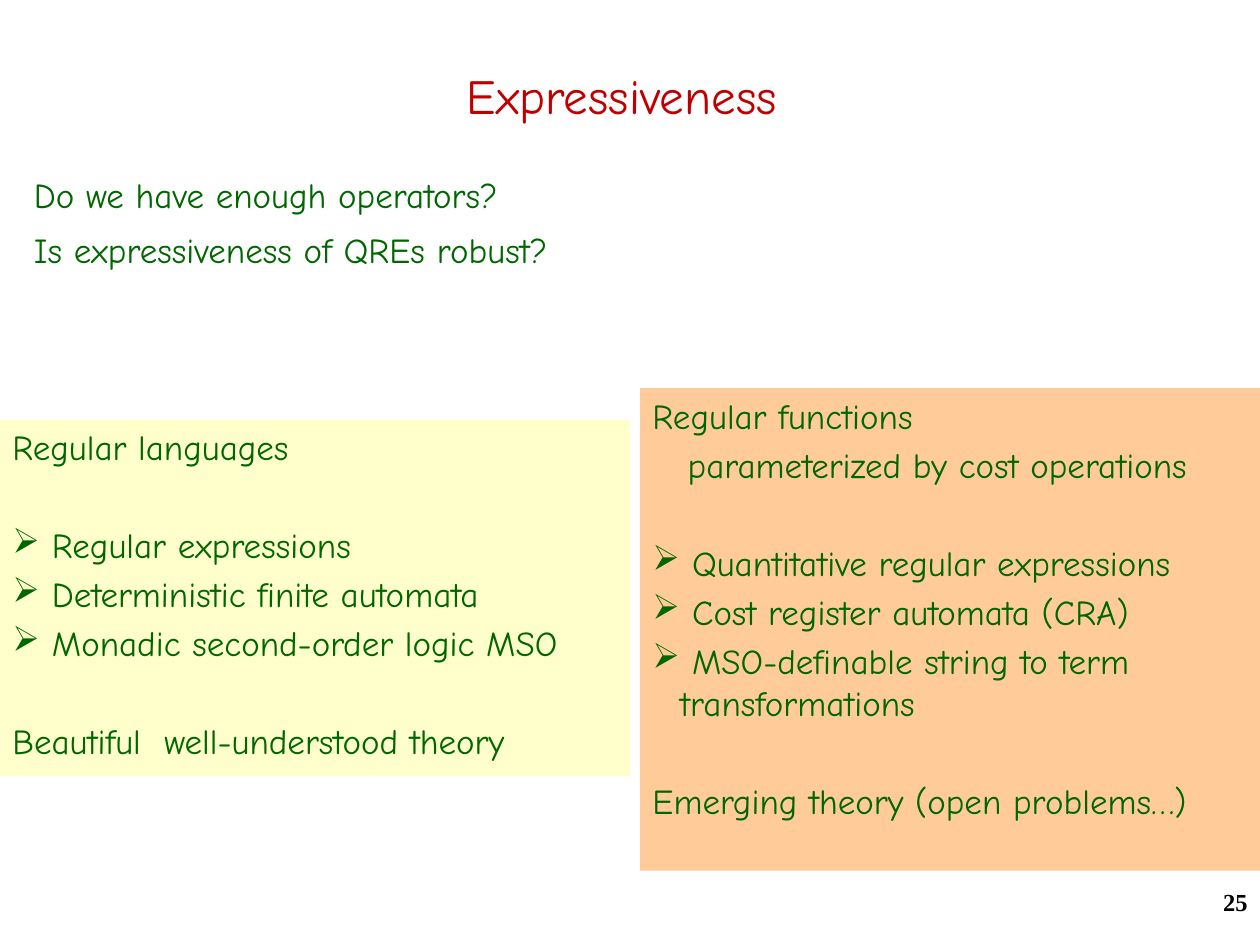
from lxml.etree import SubElement
from pptx import Presentation
from pptx.dml.color import RGBColor
from pptx.enum.shapes import MSO_SHAPE
from pptx.enum.text import MSO_ANCHOR, PP_ALIGN
from pptx.oxml.ns import qn
from pptx.util import Inches, Pt

GREEN = "006600"
LINE_GAP = 4
SECTION_GAP = 32
HANGING = 0.22


def color(hex_value):
    return RGBColor.from_string(hex_value)


def add_line(frame, text, size=20, hex_value=GREEN, name="Comic Neue",
             before=0, left=0, first=0, bullet=None, align=PP_ALIGN.LEFT, bold=False):
    is_first = not frame.paragraphs[0].runs
    line = frame.paragraphs[0] if is_first else frame.add_paragraph()
    line.add_run().text = text
    properties = line._p.get_or_add_pPr()
    properties.set("marL", str(Inches(left)))
    properties.set("indent", str(Inches(first)))
    if bullet:
        SubElement(properties, qn("a:buChar"), char=bullet)
    line.alignment = align
    line.space_before = Pt(0 if is_first else before)
    line.font.size = Pt(size)
    line.font.name = name
    line.font.bold = bold
    line.font.color.rgb = color(hex_value)


def add_text(slide, left, top, width, height, anchor=MSO_ANCHOR.TOP):
    box = slide.shapes.add_textbox(Inches(left), Inches(top), Inches(width), Inches(height))
    frame = box.text_frame
    frame.word_wrap = True
    frame.vertical_anchor = anchor
    return frame


def add_panel(slide, left, top, width, height, fill, heading, bullets, verdict, subheading=None):
    panel = slide.shapes.add_shape(
        MSO_SHAPE.RECTANGLE, Inches(left), Inches(top), Inches(width), Inches(height))
    panel.shadow.inherit = False
    panel.fill.solid()
    panel.fill.fore_color.rgb = color(fill)
    panel.line.fill.background()
    frame = panel.text_frame
    frame.word_wrap = True
    frame.vertical_anchor = MSO_ANCHOR.TOP
    add_line(frame, heading)
    if subheading:
        add_line(frame, subheading, before=LINE_GAP, left=0.28)
    for index, text in enumerate(bullets):
        add_line(frame, " " + text, before=LINE_GAP if index else SECTION_GAP,
                 left=HANGING, first=-HANGING, bullet="➢")
    add_line(frame, verdict, before=SECTION_GAP)


def main():
    deck = Presentation()
    deck.slide_width, deck.slide_height = Inches(10), Inches(7.5)
    slide = deck.slides.add_slide(deck.slide_layouts[6])

    title = add_text(slide, 0.75, 0.42, 8.5, 0.67, MSO_ANCHOR.MIDDLE)
    add_line(title, "Expressiveness ", size=28, hex_value="C00000", align=PP_ALIGN.CENTER)

    questions = add_text(slide, 0.17, 1.33, 9.83, 1.33)
    for question in ("Do we have enough operators?", "Is expressiveness of QREs robust?"):
        add_line(questions, question, before=7, left=0.38, first=-0.38)

    page_number = add_text(slide, 7.92, 6.99, 2.08, 0.5)
    add_line(page_number, "25", size=14, hex_value="000000", name="Times New Roman",
             align=PP_ALIGN.RIGHT, bold=True)

    add_panel(slide, 0, 3.33, 5, 2.83, "FFFFCC", "Regular languages",
              ["Regular expressions",
               "Deterministic finite automata",
               "Monadic second-order logic MSO"],
              "Beautiful  well-understood theory")
    add_panel(slide, 5.08, 3.08, 4.92, 3.83, "FFCC99", "Regular functions",
              ["Quantitative regular expressions",
               "Cost register automata (CRA)",
               "MSO-definable string to term transformations"],
              "Emerging theory (open problems…)",
              subheading="parameterized by cost operations")

    deck.save("out.pptx")


if __name__ == "__main__":
    main()
